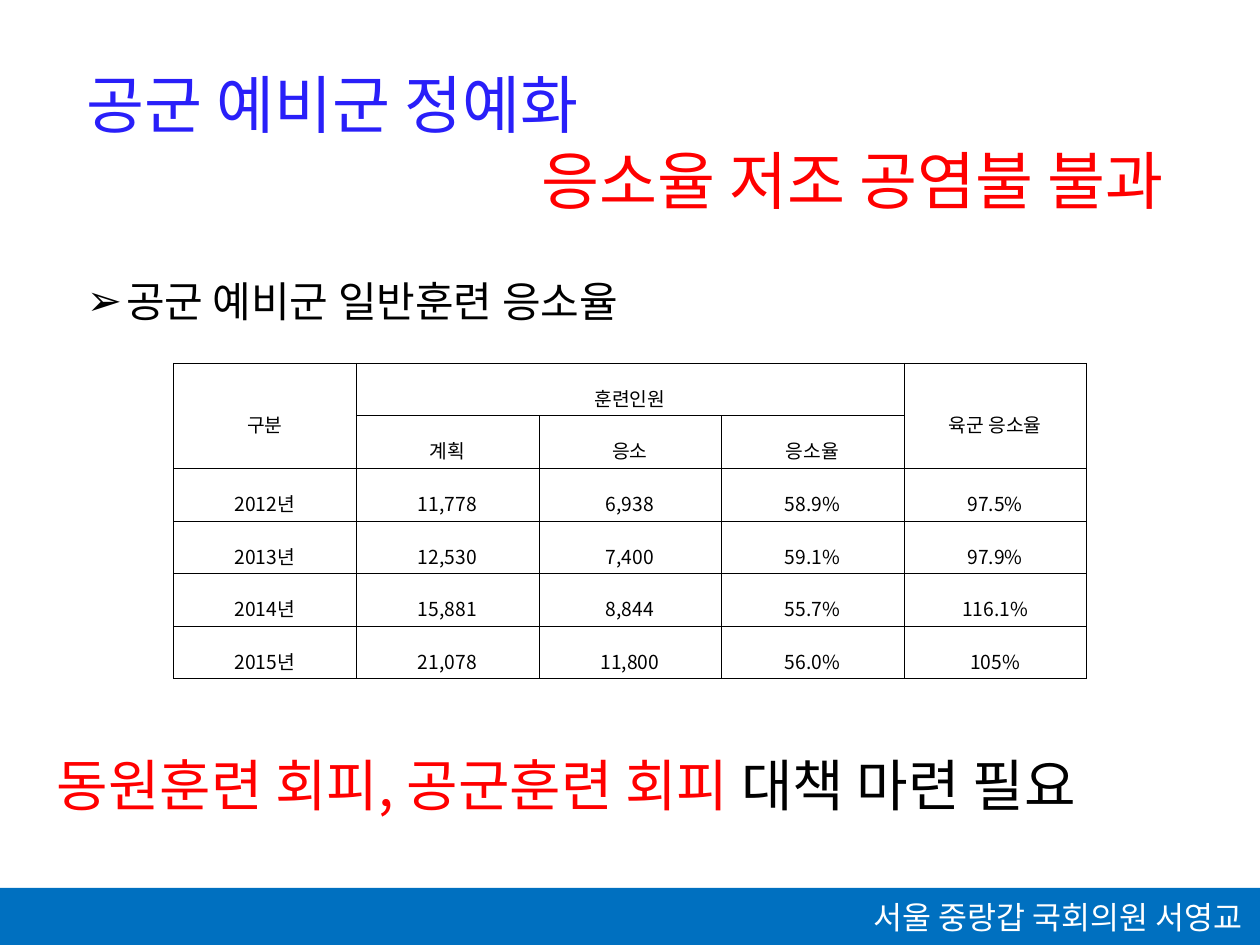
"""Build a slide on the turnout of air force reservists."""
from lxml import etree
from pptx import Presentation
from pptx.dml.color import RGBColor
from pptx.enum.shapes import MSO_SHAPE
from pptx.enum.text import MSO_ANCHOR, MSO_AUTO_SIZE, PP_ALIGN
from pptx.oxml.ns import qn
from pptx.util import Cm, Pt

LEFT, MID, RIGHT = PP_ALIGN.LEFT, PP_ALIGN.CENTER, PP_ALIGN.RIGHT
TOP, CENTER = MSO_ANCHOR.TOP, MSO_ANCHOR.MIDDLE
FIXED = MSO_AUTO_SIZE.NONE
RECT = MSO_SHAPE.RECTANGLE

BLACK = RGBColor(0, 0, 0)
WHITE = RGBColor(255, 255, 255)
RED = RGBColor(255, 0, 0)
BLUE = RGBColor(0x29, 0x1F, 0xF9)
BAND = RGBColor(0, 0x70, 0xC0)

ROWS = [
    ["구분", "훈련인원", "", "", "육군 응소율"],
    ["", "계획", "응소", "응소율", ""],
    ["2012년", "11,778", "6,938", "58.9%", "97.5%"],
    ["2013년", "12,530", "7,400", "59.1%", "97.9%"],
    ["2014년", "15,881", "8,844", "55.7%", "116.1%"],
    ["2015년", "21,078", "11,800", "56.0%", "105%"],
]
SPANS = [(0, 0, 1, 0), (0, 1, 0, 3), (0, 4, 1, 4)]


class Deck:
    """Hold the style and the current slide."""

    face = "Noto Sans CJK KR"

    def __init__(self, wide, high):
        self.file = Presentation()
        self.file.slide_width, self.file.slide_height = Cm(wide), Cm(high)
        self.slide = self.file.slides.add_slide(self.file.slide_layouts[1])
        self.shapes = self.slide.shapes

    def style(self, para, size, align):
        para.alignment = align
        para.font.size, para.font.name = Pt(size), self.face
        for run in para.runs:
            props = run._r.get_or_add_rPr()
            etree.SubElement(props, qn("a:ea"), typeface=self.face)

    def text(self, box, at, size, lines):
        box.left, box.top, box.width, box.height = map(Cm, at)
        frame = box.text_frame
        frame.word_wrap, frame.auto_size = True, FIXED
        frame.vertical_anchor = TOP
        frame.margin_left = frame.margin_right = Cm(0.25)
        frame.margin_top, frame.margin_bottom = Cm(0.2), Cm(0.05)
        for i, (align, parts) in enumerate(lines):
            para = frame.add_paragraph() if i else frame.paragraphs[0]
            for words, color in parts:
                run = para.add_run()
                run.text = words
                run.font.color.rgb = color
            self.style(para, size, align)
            para.line_spacing, para.space_before = Pt(size * 1.2), Pt(0)
        return frame

    def title(self, at, size, lines):
        self.text(self.shapes.title, at, size, lines)

    def list(self, at, size, items):
        lines = [(LEFT, [(item, BLACK)]) for item in items]
        frame = self.text(self.slide.placeholders[1], at, size, lines)
        for para in frame.paragraphs:
            props = para._p.get_or_add_pPr()
            props.set("marL", str(Cm(0.79)))
            props.set("indent", str(Cm(-0.79)))
            etree.SubElement(props, qn("a:buChar"), char="➢")
            props.append(props.find(qn("a:defRPr")))

    def note(self, at, size, align, parts):
        box = self.shapes.add_textbox(*map(Cm, at))
        self.text(box, at, size, [(align, parts)])

    def bar(self, at, color):
        bar = self.shapes.add_shape(RECT, *map(Cm, at))
        bar.shadow.inherit = False
        bar.fill.solid()
        bar.fill.fore_color.rgb = color
        bar.line.fill.background()

    def cell(self, cell, words):
        cell.text = words
        para = cell.text_frame.paragraphs[0]
        self.style(para, 11, MID)
        para.font.color.rgb, para.line_spacing = BLACK, 1.6
        cell.vertical_anchor = CENTER
        cell.margin_left = cell.margin_right = Cm(0.18)
        cell.margin_top = cell.margin_bottom = Cm(0.05)
        props = cell._tc.get_or_add_tcPr()
        for side in "LRTB":
            line = etree.SubElement(props, qn("a:ln" + side), w=str(Pt(0.28)))
            fill = etree.SubElement(line, qn("a:solidFill"))
            etree.SubElement(fill, qn("a:srgbClr"), val=str(BLACK))
        cell.fill.background()

    def table(self, left, top, wide, high, rows, spans):
        cols = len(rows[0])
        size = Cm(wide * cols), Cm(high * len(rows))
        table = self.shapes.add_table(
            len(rows), cols, Cm(left), Cm(top), *size).table
        table.first_row = table.horz_banding = False
        for col in table.columns:
            col.width = Cm(wide)
        for r, row in enumerate(rows):
            table.rows[r].height = Cm(high)
            for c, words in enumerate(row):
                self.cell(table.cell(r, c), words)
        for r, c, down, over in spans:
            table.cell(r, c).merge(table.cell(down, over))


def main():
    deck = Deck(25.4, 19.05)
    deck.title((1.5, 1.12, 22.2, 3.33), 36, [
        (LEFT, [("공군 예비군 정예화", BLUE)]),
        (RIGHT, [("응소율 저조 공염불 불과", RED)]),
    ])
    deck.list((1.5, 5.36, 13.8, 1.27), 24, ["공군 예비군 일반훈련 응소율"])
    deck.note((0.89, 14.94, 23.6, 1.63), 32, LEFT, [
        ("동원훈련 회피, 공군훈련 회피 ", RED), ("대책 마련 필요", BLACK)])
    deck.bar((0, 17.9, 25.4, 1.15), BAND)
    deck.note((15.29, 17.9, 10, 1.04), 18, RIGHT,
              [("서울 중랑갑 국회의원 서영교", WHITE)])
    deck.table(3.5, 7.32, 3.68, 1.06, ROWS, SPANS)
    deck.file.save("out.pptx")


if __name__ == "__main__":
    main()
